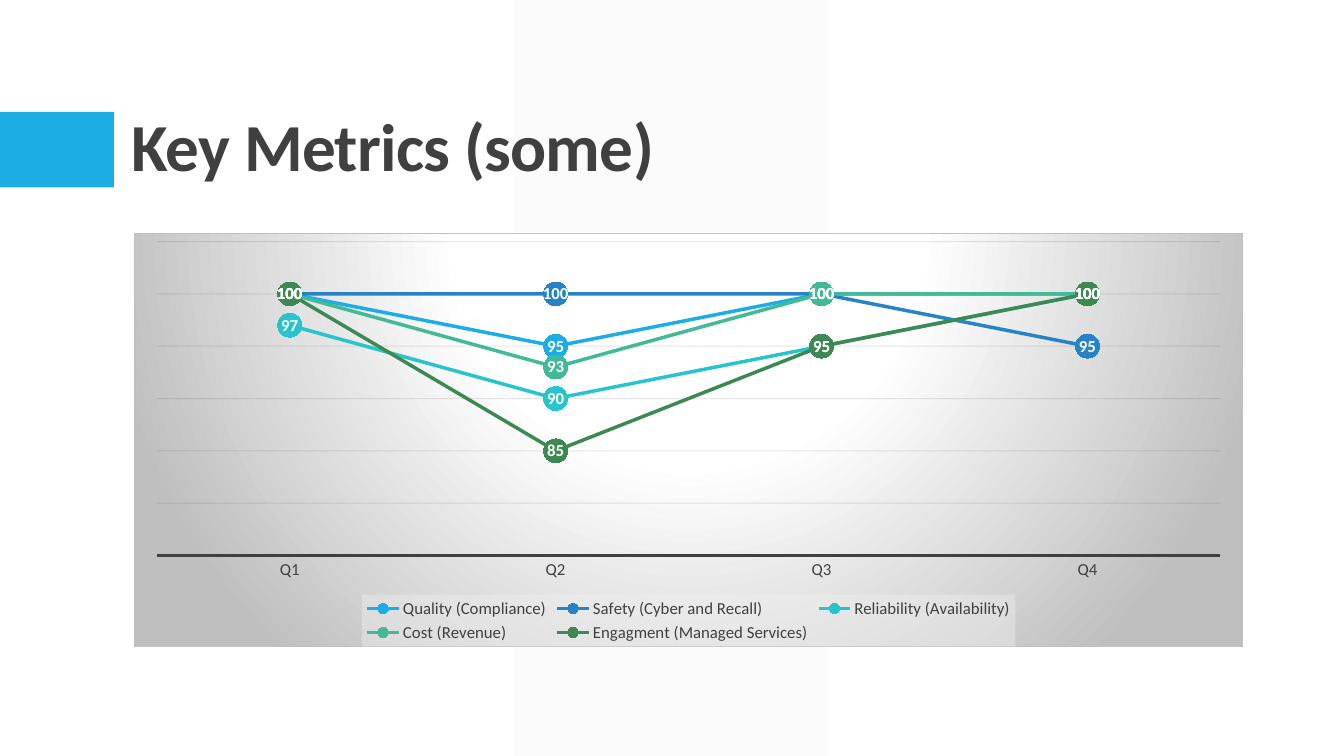
"""Build the key metrics slide with a quarterly line chart."""
from pptx import Presentation
from pptx.chart.data import CategoryChartData
from pptx.dml.color import RGBColor
from pptx.enum.chart import XL_CHART_TYPE as ChartType
from pptx.enum.chart import XL_LABEL_POSITION as LabelPosition
from pptx.enum.chart import XL_LEGEND_POSITION as LegendPosition
from pptx.enum.chart import XL_MARKER_STYLE as MarkerStyle
from pptx.enum.chart import XL_TICK_MARK as TickMark
from pptx.enum.shapes import MSO_SHAPE as ShapeType
from pptx.enum.text import MSO_ANCHOR as Anchor
from pptx.enum.text import MSO_AUTO_SIZE as AutoSize
from pptx.enum.text import PP_ALIGN as Align
from pptx.oxml import parse_xml
from pptx.oxml.ns import nsdecls, qn
from pptx.util import Inches, Pt

FONT = "Calibri"
WHITE = RGBColor(0xFF, 0xFF, 0xFF)
PALE_GRAY = RGBColor(0xF2, 0xF2, 0xF2)
MID_GRAY = RGBColor(0xBF, 0xBF, 0xBF)
DARK_GRAY = RGBColor(0x40, 0x40, 0x40)
GRID_BLACK = RGBColor(0x0D, 0x0D, 0x0D)
SKY = RGBColor(0x1C, 0xAD, 0xE4)
BLUE = RGBColor(0x26, 0x83, 0xC6)
TURQUOISE = RGBColor(0x28, 0xC4, 0xCC)
MINT = RGBColor(0x42, 0xBA, 0x97)
GREEN = RGBColor(0x3E, 0x88, 0x53)

QUARTERS = ("Q1", "Q2", "Q3", "Q4")
METRICS = (
    ("Quality (Compliance)", (100, 95, 100, 100), SKY),
    ("Safety (Cyber and Recall)", (100, 100, 100, 95), BLUE),
    ("Reliability (Availability)", (97, 90, 95, 100), TURQUOISE),
    ("Cost (Revenue)", (100, 93, 100, 100), MINT),
    ("Engagment (Managed Services)", (100, 85, 95, 100), GREEN),
)


def style_font(font, size, color, bold=False):
    font.name = FONT
    font.size = Pt(size)
    font.bold = bold
    font.color.rgb = color


def style_line(line, color, width):
    line.color.rgb = color
    line.width = Pt(width)


def set_opacity(element, percent):
    color = next(element.iter(qn("a:srgbClr")))
    color.append(parse_xml(f'<a:alpha {nsdecls("a")} val="{percent * 1000}"/>'))


def add_block(slide, shape_type, left, top, width, height, color):
    shape = slide.shapes.add_shape(
        shape_type, Inches(left), Inches(top), Inches(width), Inches(height))
    shape.shadow.inherit = False
    shape.fill.solid()
    shape.fill.fore_color.rgb = color
    shape.line.fill.background()
    return shape


def add_background(slide):
    band = add_block(slide, ShapeType.PARALLELOGRAM, 5.1, 0, 3.12, 7.5, PALE_GRAY)
    band.adjustments[0] = 0
    set_opacity(band.element, 30)
    add_block(slide, ShapeType.RECTANGLE, 0, 1.11, 1.13, 0.75, SKY)


def add_title(slide, text):
    title = slide.shapes.title
    title.left, title.top = Inches(1.2), Inches(0.31)
    title.width, title.height = Inches(11), Inches(1.59)
    slide.shapes.element.append(title.element)
    frame = title.text_frame
    frame.vertical_anchor = Anchor.BOTTOM
    frame.auto_size = AutoSize.NONE
    frame.word_wrap = True
    paragraph = frame.paragraphs[0]
    paragraph.alignment = Align.LEFT
    paragraph.line_spacing = 0.9
    run = paragraph.add_run()
    run.text = text
    style_font(run.font, 48, DARK_GRAY, bold=True)
    run.font.element.set("spc", "-50") if hasattr(run.font, "element") else \
        run._r.get_or_add_rPr().set("spc", "-50")


def style_axes(chart):
    category_axis = chart.category_axis
    category_axis.major_tick_mark = TickMark.NONE
    style_font(category_axis.tick_labels.font, 12, DARK_GRAY)
    style_line(category_axis.format.line, DARK_GRAY, 1.5)
    value_axis = chart.value_axis
    value_axis.visible = False
    value_axis.minimum_scale = 75
    value_axis.maximum_scale = 105
    value_axis.major_unit = 5
    style_line(value_axis.major_gridlines.format.line, GRID_BLACK, 0.75)
    set_opacity(next(chart.element.iter(qn("c:majorGridlines"))), 10)


def style_series(series, color):
    series.smooth = False
    style_line(series.format.line, color, 2.5)
    marker = series.marker
    marker.style = MarkerStyle.CIRCLE
    marker.size = 17
    marker.format.fill.solid()
    marker.format.fill.fore_color.rgb = color
    marker.format.line.fill.background()
    labels = series.data_labels
    labels.show_value = True
    labels.position = LabelPosition.CENTER
    style_font(labels.font, 12, WHITE, bold=True)


def add_legend(chart):
    chart.has_legend = True
    legend = chart.legend
    legend.position = LegendPosition.BOTTOM
    legend.include_in_layout = False
    style_font(legend.font, 12, DARK_GRAY)
    panel = parse_xml(
        f'<c:spPr {nsdecls("c", "a")}><a:solidFill><a:srgbClr val="{PALE_GRAY}"/>'
        '</a:solidFill></c:spPr>')
    set_opacity(panel, 39)
    legend_element = next(chart.element.iter(qn("c:legend")))
    legend_element.find(qn("c:txPr")).addprevious(panel)


def set_plot_layout(chart, left, top, width, height):
    plot_area = next(chart.element.iter(qn("c:plotArea")))
    for layout in plot_area.findall(qn("c:layout")):
        plot_area.remove(layout)
    plot_area.insert(0, parse_xml(
        f'<c:layout {nsdecls("c")}><c:manualLayout><c:layoutTarget val="inner"/>'
        '<c:xMode val="edge"/><c:yMode val="edge"/>'
        f'<c:x val="{left}"/><c:y val="{top}"/><c:w val="{width}"/><c:h val="{height}"/>'
        '</c:manualLayout></c:layout>'))


def set_chart_background(chart):
    stops = "".join(
        f'<a:gs pos="{position * 1000}"><a:srgbClr val="{color}"/></a:gs>'
        for position, color in ((0, WHITE), (39, WHITE), (100, MID_GRAY)))
    chart.element.find(qn("c:chart")).addnext(parse_xml(
        f'<c:spPr {nsdecls("c", "a")}><a:gradFill><a:gsLst>{stops}</a:gsLst>'
        '<a:path path="circle"><a:fillToRect l="50000" t="-80000" r="50000" b="180000"/>'
        f'</a:path></a:gradFill><a:ln w="{Pt(0.75)}"><a:solidFill>'
        f'<a:srgbClr val="{MID_GRAY}"/></a:solidFill></a:ln></c:spPr>'))


def add_metrics_chart(slide):
    data = CategoryChartData()
    data.categories = QUARTERS
    for name, values, _ in METRICS:
        data.add_series(name, values)
    chart = slide.shapes.add_chart(
        ChartType.LINE_MARKERS, Inches(1.33), Inches(2.31), Inches(11), Inches(4.11),
        data).chart
    chart.has_title = False
    chart.font.name = FONT
    chart.font.size = Pt(10)
    plot = chart.plots[0]
    plot.vary_by_categories = False
    for series, (_, _, color) in zip(plot.series, METRICS):
        style_series(series, color)
    style_axes(chart)
    add_legend(chart)
    set_plot_layout(chart, 0.02, 0.02, 0.96, 0.76)
    set_chart_background(chart)


def main():
    presentation = Presentation()
    presentation.slide_width = Inches(13.33)
    presentation.slide_height = Inches(7.5)
    slide = presentation.slides.add_slide(presentation.slide_layouts[5])
    add_background(slide)
    add_title(slide, "Key Metrics (some)")
    add_metrics_chart(slide)
    presentation.save("out.pptx")


if __name__ == "__main__":
    main()
